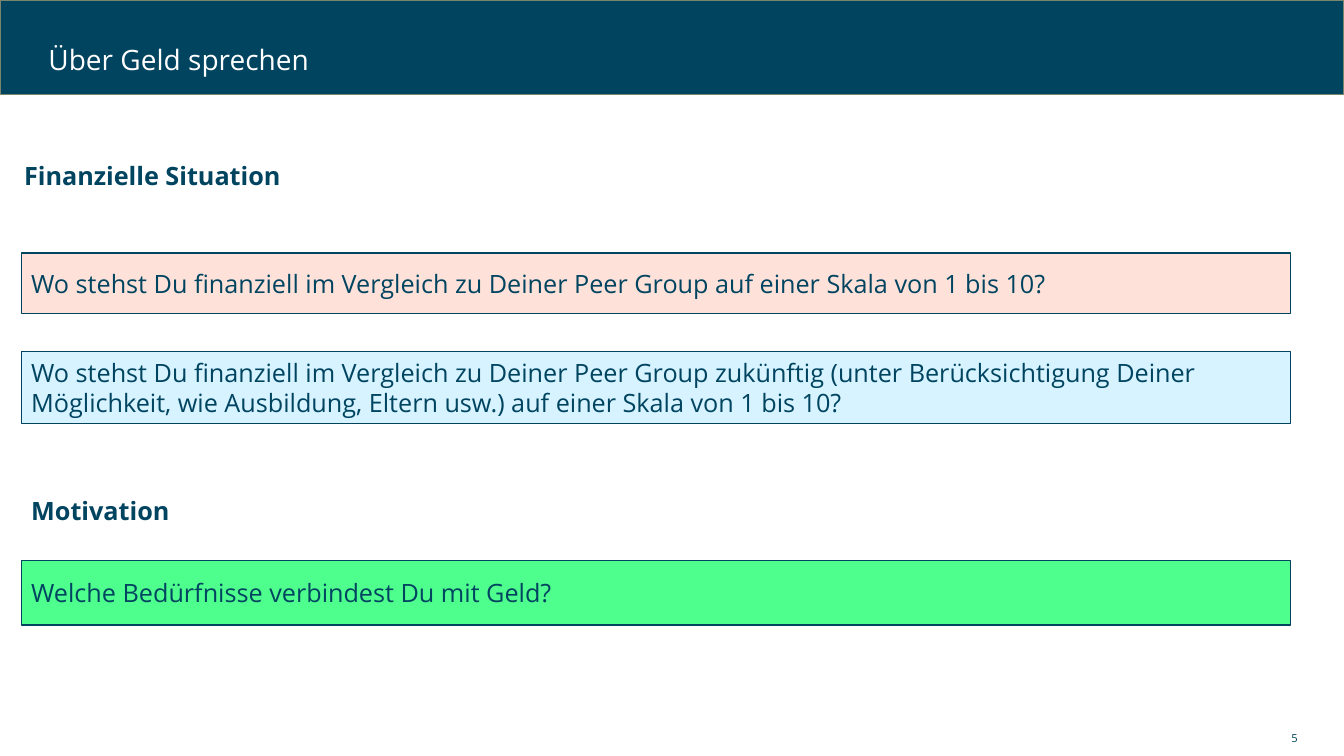
from pptx import Presentation
from pptx import util as u
from pptx.dml.color import RGBColor
from pptx.enum import shapes, text

COLORS = {
    "navy": "004460",
    "band_edge": "7A866C",
    "white": "FFFFFF",
    "rose": "FEE2DA",
    "sky": "D6F3FF",
    "green": "4FFF8E",
}
TITLE_ONLY = 5


class SlideBuilder:
    """Draws on one slide; every area is (left, top, width, height) in percent of the slide."""

    font = "Open Sans"
    body_size = 18

    def __init__(self, presentation):
        self.width = presentation.slide_width
        self.height = presentation.slide_height
        self.slide = presentation.slides.add_slide(presentation.slide_layouts[TITLE_ONLY])

    def place(self, area):
        left, top, width, height = (share / 100 for share in area)
        return (round(left * self.width), round(top * self.height),
                round(width * self.width), round(height * self.height))

    def set_text(self, shape, wording, size=body_size, color="navy", bold=False,
                 align=text.PP_ALIGN.LEFT, anchor=text.MSO_ANCHOR.MIDDLE, wrap=True):
        frame = shape.text_frame
        frame.text = wording
        frame.word_wrap = wrap
        frame.auto_size = text.MSO_AUTO_SIZE.NONE if wrap else text.MSO_AUTO_SIZE.SHAPE_TO_FIT_TEXT
        frame.vertical_anchor = anchor
        paragraph = frame.paragraphs[0]
        paragraph.alignment = align
        font = paragraph.runs[0].font
        font.name, font.size, font.bold = self.font, u.Pt(size), bold
        font.color.rgb = RGBColor.from_string(COLORS[color])
        return paragraph

    def panel(self, area, fill, edge="navy"):
        shape = self.slide.shapes.add_shape(shapes.MSO_SHAPE.RECTANGLE, *self.place(area))
        shape.shadow.inherit = False
        shape.fill.solid()
        shape.fill.fore_color.rgb = RGBColor.from_string(COLORS[fill])
        shape.line.color.rgb = RGBColor.from_string(COLORS[edge])
        shape.line.width = u.Pt(1)
        return shape

    def title(self, wording, area, band_area):
        """Fill the title placeholder and put the coloured band behind it."""
        title = self.slide.shapes.title
        title.left, title.top, title.width, title.height = self.place(area)
        self.set_text(title, wording, size=20, color="white").line_spacing = 0.9
        band = self.panel(band_area, "navy", "band_edge")
        title.element.addprevious(band.element)

    def question(self, wording, top, height, fill):
        self.set_text(self.panel((1.58, top, 94.45, height), fill), wording)

    def heading(self, wording, left, top, width):
        box = self.slide.shapes.add_textbox(*self.place((left, top, width, 5.33)))
        self.set_text(box, wording, bold=True, anchor=text.MSO_ANCHOR.TOP, wrap=False)

    def page_number(self, number, area):
        box = self.slide.shapes.add_textbox(*self.place(area))
        self.set_text(box, str(number), size=8, align=text.PP_ALIGN.RIGHT)


def main():
    presentation = Presentation()
    presentation.slide_width, presentation.slide_height = u.Inches(13.33), u.Inches(7.5)
    builder = SlideBuilder(presentation)

    builder.title("Über Geld sprechen", (2.85, 4.53, 82.67, 7.2), (0, 0, 100, 12.53))
    builder.question("Wo stehst Du finanziell im Vergleich zu Deiner Peer Group "
                     "auf einer Skala von 1 bis 10?", 33.47, 8, "rose")
    builder.question("Wo stehst Du finanziell im Vergleich zu Deiner Peer Group zukünftig "
                     "(unter Berücksichtigung Deiner Möglichkeit, wie Ausbildung, Eltern usw.) "
                     "auf einer Skala von 1 bis 10?", 46.53, 9.47, "sky")
    builder.heading("Finanzielle Situation", 1.05, 20.53, 20.86)
    builder.heading("Motivation", 1.58, 64.8, 11.93)
    builder.question("Welche Bedürfnisse verbindest Du mit Geld?", 74.13, 8.53, "green")
    builder.page_number(5, (70.67, 96, 26.63, 3.2))

    presentation.save("out.pptx")


if __name__ == "__main__":
    main()
